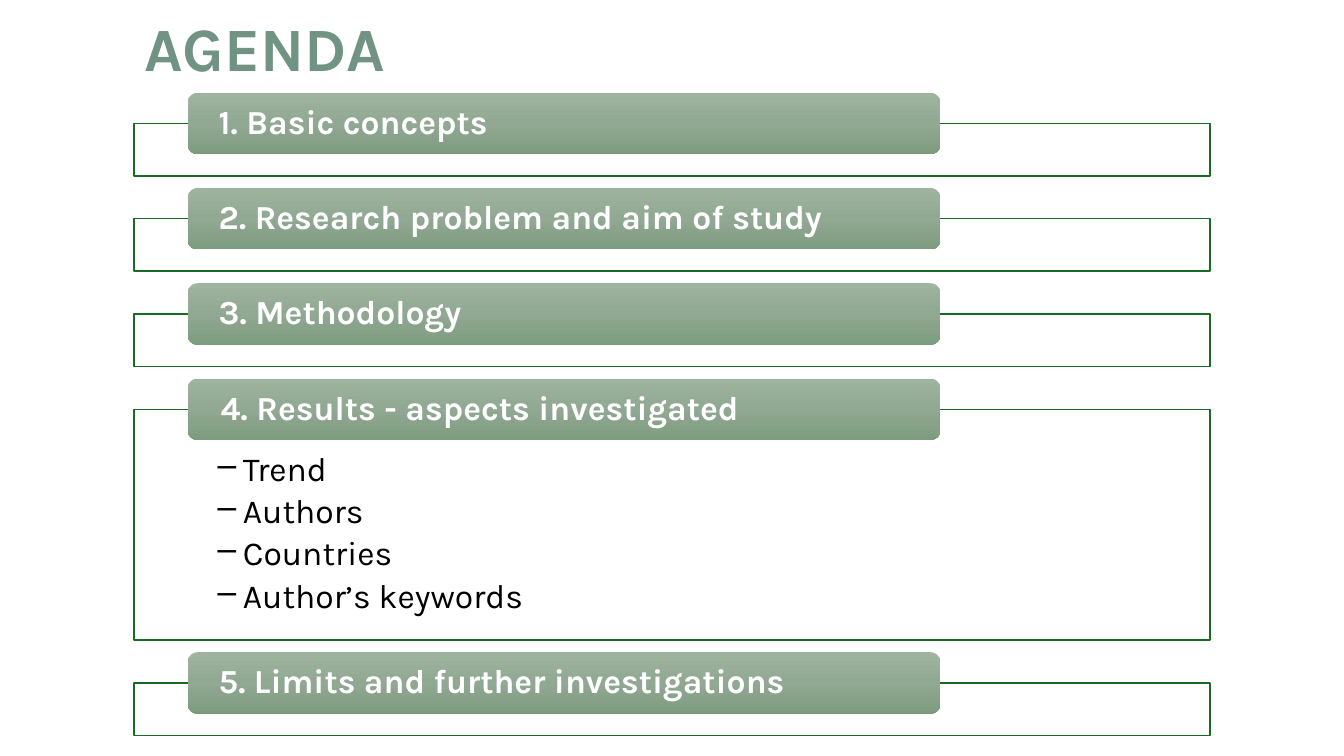
from copy import deepcopy

from lxml.etree import SubElement
from pptx import Presentation
from pptx.dml.color import RGBColor
from pptx.enum.shapes import MSO_SHAPE as SHAPE
from pptx.enum.text import MSO_ANCHOR as ANCHOR, PP_ALIGN as ALIGN
from pptx.oxml.ns import qn
from pptx.util import Inches, Pt

FONT = "Karla"
LEFT, WIDTH = 1.33, 10.67
TOP, GAP = 0.92, 0.11
TAB_SHIFT, TAB_W, TAB_H = 0.53, 0.7 * WIDTH, 0.61
FRAME_H, OPEN_FRAME_H = 0.52, 2.29
GRADIENT = "9EB49F", "91A892", "7D9C7E"

AGENDA = [
    ("1. Basic concepts", []),
    ("2. Research problem and aim of study", []),
    ("3. Methodology", []),
    ("4. Results - aspects investigated",
     ["Trend", "Authors", "Countries", "Author’s keywords"]),
    ("5. Limits and further investigations", []),
]


def rgb(hex_string):
    return RGBColor.from_string(hex_string)


def add_box(s, kind, x, y, w, h):
    sp = s.shapes.add_shape(kind, *map(Inches, (x, y, w, h)))
    sp.shadow.inherit = False
    return sp


def set_insets(tf, side, top=0, bottom=0):
    tf.word_wrap = True
    tf.margin_left = tf.margin_right = Inches(side)
    tf.margin_top, tf.margin_bottom = Inches(top), Inches(bottom)


def style_paragraph(p, size, color, bold=False):
    p.alignment = ALIGN.LEFT
    p.line_spacing = 0.9
    for r in p.runs:
        r.font.name, r.font.size, r.font.bold = FONT, Pt(size), bold
        r.font.color.rgb = rgb(color)


def add_dash(p):
    """Give the paragraph a hanging en dash as its bullet."""
    pPr = p._p.get_or_add_pPr()
    pPr.set("marL", str(Inches(0.25)))
    pPr.set("indent", str(-Inches(0.25)))
    SubElement(pPr, qn("a:buChar"), char="–")


def add_title(s, text, x, y, w, h):
    tf = s.shapes.add_textbox(*map(Inches, (x, y, w, h))).text_frame
    set_insets(tf, 0.1, 0.05, 0.05)
    tf.vertical_anchor = ANCHOR.MIDDLE
    tf.text = text
    style_paragraph(tf.paragraphs[0], 44, "709383", bold=True)


def add_frame(s, points, x, y, w, h):
    sp = add_box(s, SHAPE.RECTANGLE, x, y, w, h)
    sp.fill.solid()
    sp.fill.fore_color.rgb = rgb("FFFFFF")
    white = sp._element.spPr.find(qn("a:solidFill"))[0]
    SubElement(white, qn("a:alpha"), val="90000")
    sp.line.color.rgb = rgb("196B24")
    sp.line.width = Pt(1)
    if not points:
        return
    tf = sp.text_frame
    set_insets(tf, 0.83, 0.43, 0.19)
    tf.vertical_anchor = ANCHOR.TOP
    tf.text = "\n".join(points)
    for p in tf.paragraphs:
        style_paragraph(p, 24, "000000")
        p.space_after = Pt(4.2)
        add_dash(p)


def add_tab(s, heading, inset, x, y, w, h):
    sp = add_box(s, SHAPE.ROUNDED_RECTANGLE, x, y, w, h)
    sp.line.fill.background()
    sp.fill.gradient()
    sp.fill.gradient_angle = 270
    stops = sp._element.spPr.find(qn("a:gradFill")).find(qn("a:gsLst"))
    stops.insert(1, deepcopy(stops[0]))
    for i, (stop, color) in enumerate(zip(sp.fill.gradient_stops, GRADIENT)):
        stop.position = i / 2
        stop.color.rgb = rgb(color)
    tf = sp.text_frame
    set_insets(tf, inset)
    tf.vertical_anchor = ANCHOR.MIDDLE
    tf.text = heading
    style_paragraph(tf.paragraphs[0], 24, "FFFFFF", bold=True)


def add_agenda(s, items, x, y, w):
    """Stack the items; each tab straddles the top edge of its frame."""
    for heading, points in items:
        frame_y = y + TAB_H / 2
        frame_h = OPEN_FRAME_H if points else FRAME_H
        add_frame(s, points, x, frame_y, w, frame_h)
        add_tab(s, heading, 0.3 if points else 0.28,
                x + TAB_SHIFT, y, TAB_W, TAB_H)
        y = frame_y + frame_h + GAP + 0.01


def main():
    prs = Presentation()
    prs.slide_width, prs.slide_height = Inches(13.33), Inches(7.5)
    s = prs.slides.add_slide(prs.slide_layouts[6])
    add_title(s, "AGENDA", LEFT, 0.11, 11.09, 0.81)
    add_agenda(s, AGENDA, LEFT, TOP, WIDTH)
    prs.save("out.pptx")


if __name__ == "__main__":
    main()
